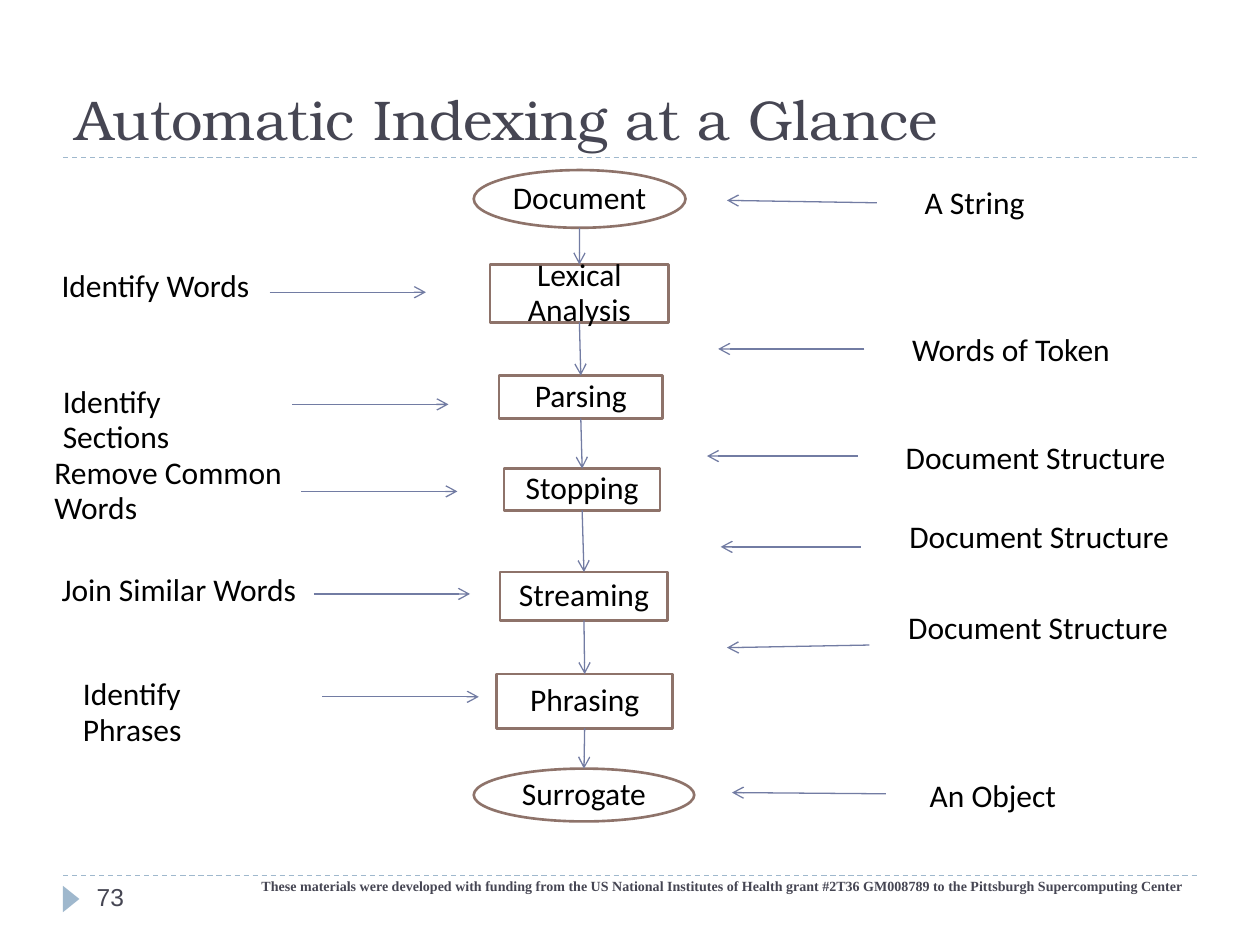
from pptx import Presentation
from pptx.dml.color import RGBColor
from pptx.enum.dml import MSO_LINE
from pptx.enum.shapes import MSO_CONNECTOR, MSO_SHAPE
from pptx.enum.text import MSO_ANCHOR, PP_ALIGN
from pptx.oxml.ns import qn
from pptx.util import Pt
from lxml.etree import SubElement

INK, BROWN, BLUE, PALE = "464653", "8E736A", "727CA3", "9FB8CD"
OVAL, RECT = MSO_SHAPE.OVAL, MSO_SHAPE.RECTANGLE

# Name, outline, then left, top, width, height within the flow
STAGES = [
    ("Document", OVAL, 0.7, 0, 121, 33),
    ("Lexical Analysis", RECT, 10, 54, 102.2, 33),
    ("Parsing", RECT, 15.1, 117.4, 93.6, 24.5),
    ("Stopping", RECT, 18, 170.6, 89.3, 23.8),
    ("Streaming", RECT, 15.8, 229.7, 95.8, 27.6),
    ("Phrasing", RECT, 13.7, 288, 100.8, 31),
    ("Surrogate", OVAL, 0.7, 342, 126, 30.2),
]
# Text, left, top, width, wrap, then arrow start and end within the column
REACH = 89.3
ACTIONS = [
    (name, x, y, w, wrap, (ax, ay), (ax + REACH, ay))
    for name, x, y, w, wrap, ax, ay in [
        ("Identify Words", 4.1, 0.5, 121.7, False, 130.1, 17),
        ("Identify Sections", 4.8, 66.7, 134.6, True, 143, 81.1),
        ("Remove Common Words", 0, 107, 152.6, True, 148.1, 130.8),
        ("Join Similar Words", 4.1, 174, 149, False, 155.3, 189.4),
        ("Identify Phrases", 16.3, 233.8, 129.6, True, 160.3, 248.2),
    ]
]
RESULTS = [
    ("A String", 117.3, 6, 74.2, False, (97.1, 18.9), (11.4, 17.5)),
    ("Words of Token", 110.1, 90.2, 131.8, False, (89.9, 102.4), (6.4, 102.4)),
    ("Document Structure", 106.5, 151.4, 167.8, False, (86.3, 163.6), (0, 163.6)),
    ("Document Structure", 108.6, 196.8, 167.8, False, (87.8, 215.5), (7.8, 215.5)),
    ("Document Structure", 107.9, 248.6, 167.8, False, (92.8, 271.6), (11.4, 273.1)),
    ("An Object", 120.2, 345.1, 91.4, False, (102.2, 356.6), (14.3, 355.9)),
]


def color(code):
    return RGBColor.from_string(code)


def write(shape, text, font="Calibri", size=18, ink="000000", bold=False,
          align=PP_ALIGN.LEFT, anchor=MSO_ANCHOR.TOP, space=0.93, wrap=True):
    frame = shape.text_frame
    frame.word_wrap = wrap
    frame.vertical_anchor = anchor
    para = frame.paragraphs[0]
    para.alignment = align
    para.line_spacing = space
    run = para.add_run()
    run.text = text
    run.font.name = font
    run.font.size = Pt(size)
    run.font.bold = bold
    run.font.color.rgb = color(ink)


def label(slide, text, x, y, w, h, **style):
    box = slide.shapes.add_textbox(Pt(x), Pt(y), Pt(w), Pt(h))
    write(box, text, **style)


def draw(slide, kind, x, y, w, h, fill, edge=None):
    shape = slide.shapes.add_shape(kind, Pt(x), Pt(y), Pt(w), Pt(h))
    shape.shadow.inherit = False
    shape.fill.solid()
    shape.fill.fore_color.rgb = color(fill)
    if edge:
        shape.line.color.rgb = color(edge)
        shape.line.width = Pt(1.5)
    else:
        shape.line.fill.background()
    return shape


def link(slide, start, end, ink=BLUE, arrow=True):
    line = slide.shapes.add_connector(
        MSO_CONNECTOR.STRAIGHT, *[Pt(v) for v in (*start, *end)])
    line.line.color.rgb = color(ink)
    line.line.width = Pt(0.75)
    if arrow:
        SubElement(line.line._get_or_add_ln(), qn("a:tailEnd"), type="arrow")
    else:
        line.line.dash_style = MSO_LINE.DASH
    SubElement(line._element.spPr, qn("a:effectLst"))


def header(slide, x, y, w, h):
    label(slide, "Automatic Indexing at a Glance", x, y, w, h, size=32,
          font="TeX Gyre Bonum", ink=INK, anchor=MSO_ANCHOR.BOTTOM, space=1)
    link(slide, (x, y + h), (x + w, y + h), PALE, arrow=False)


def footer(slide, x, y, w):
    link(slide, (x, y), (x + w, y), PALE, arrow=False)
    mark = draw(slide, MSO_SHAPE.ISOSCELES_TRIANGLE, x - 2.9, y + 8.6, 15.1, 9.4, PALE)
    mark.rotation = 90
    label(slide, "These materials were developed with funding from the US National "
          "Institutes of Health grant #2T36 GM008789 to the Pittsburgh "
          "Supercomputing Center", x + 77, y - 2.2, w - 77, 28.8, size=8,
          font="Times New Roman", ink=INK, bold=True, align=PP_ALIGN.RIGHT, space=1)
    label(slide, "73", x + 12.2, y, 156.2, 28.8, size=14, font="Arial", ink=INK, space=1)


def flow(slide, x, y):
    foot = None
    for name, kind, dx, dy, w, h in STAGES:
        stage = draw(slide, kind, x + dx, y + dy, w, h, "FFFFFF", BROWN)
        write(stage, name, align=PP_ALIGN.CENTER, anchor=MSO_ANCHOR.MIDDLE)
        if kind == OVAL:
            stage.text_frame.margin_left = stage.text_frame.margin_right = 0
        # Bottom centre of the stage before to top centre of this one
        mid = x + dx + w / 2
        if foot:
            link(slide, foot, (mid, y + dy))
        foot = (mid, y + dy + h)


def notes(slide, x, y, rows):
    for name, dx, dy, w, wrap, start, end in rows:
        label(slide, name, x + dx, y + dy, w, 27.4, wrap=wrap)
        link(slide, (x + start[0], y + start[1]), (x + end[0], y + end[1]))


def main():
    deck = Presentation()
    deck.slide_width, deck.slide_height = Pt(720), Pt(540)
    slide = deck.slides.add_slide(deck.slide_layouts[6])
    header(slide, 36, 12, 648, 78)
    footer(slide, 36, 500.4, 648)
    flow(slide, 270, 97.2)
    notes(slide, 24, 150, ACTIONS)
    notes(slide, 404, 97, RESULTS)
    deck.save("out.pptx")


if __name__ == "__main__":
    main()
